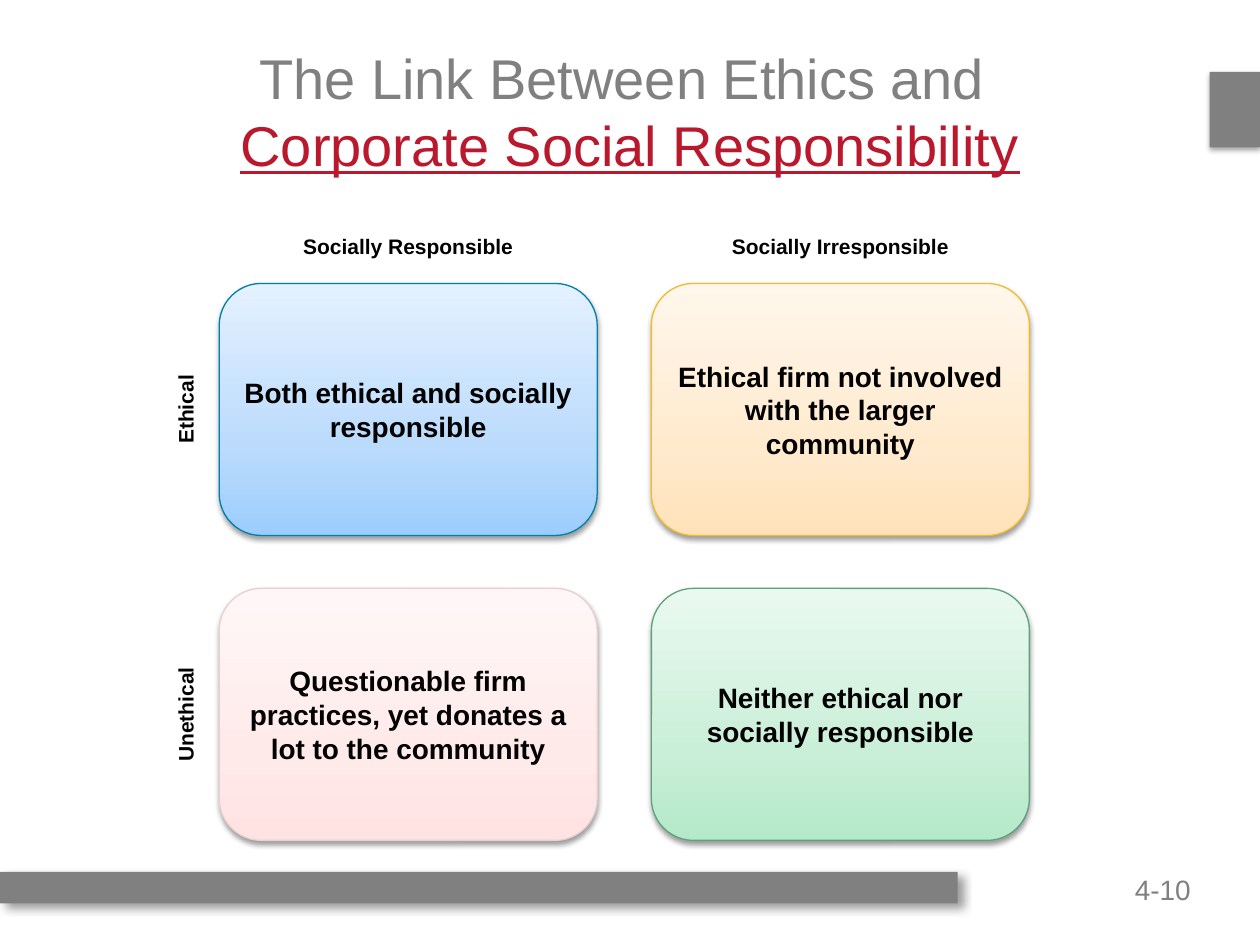
from copy import deepcopy

from pptx import Presentation
from pptx import util as u
from pptx.dml.color import RGBColor
from pptx.enum import shapes, text
from pptx.oxml import parse_xml
from pptx.oxml.ns import nsdecls, qn

GREY, RED, BLACK, WHITE = "808080", "BA182D", "000000", "FFFFFF"
MID, RIGHT = text.PP_ALIGN.CENTER, text.PP_ALIGN.RIGHT
LEFTS, TOPS = (1.74, 5.17), (2.25, 4.67)
WIDE, HIGH = 3, 2


def rgb(code):
    return RGBColor.from_string(code)


class Page:
    """Holds the text style and the slide being built."""
    face = "Arial"
    note = {"size": u.Pt(12), "bold": True}
    main = {"size": u.Pt(16), "bold": True}

    def __init__(self, deck):
        self.slide = deck.slides.add_slide(deck.slide_layouts[5])
        back = self.slide.background.fill
        back.solid()
        back.fore_color.rgb = rgb(WHITE)

    def run(self, para, words, color, form):
        run = para.add_run()
        run.text = words
        run.font.name = self.face
        run.font.color.rgb = rgb(color)
        for key, value in form.items():
            setattr(run.font, key, value)

    def title(self, first, second):
        head = self.slide.shapes.title
        place = {"left": 0.6, "top": 0.25, "width": 8.8, "height": 1.25}
        for key, value in place.items():
            setattr(head, key, u.Inches(value))
        frame = head.text_frame
        frame.vertical_anchor = text.MSO_ANCHOR.MIDDLE
        para = frame.paragraphs[0]
        para.alignment = MID
        form = {"size": u.Pt(32)}
        self.run(para, first, GREY, form)
        para.add_line_break()
        self.run(para, second, RED, {**form, "underline": True})

    def label(self, words, place, turn=0):
        box = self.slide.shapes.add_textbox(*map(u.Inches, place))
        box.rotation = turn
        frame = box.text_frame
        form = {"word_wrap": False, "vertical_anchor": text.MSO_ANCHOR.MIDDLE,
                "margin_left": 0, "margin_top": 0,
                "margin_right": 0, "margin_bottom": 0}
        for key, value in form.items():
            setattr(frame, key, value)
        para = frame.paragraphs[0]
        para.alignment = MID
        self.run(para, words, BLACK, self.note)

    def number(self, words):
        box = self.slide.shapes.add_textbox(
            *map(u.Inches, (7.5, 6.92, 1.95, 0.25)))
        frame = box.text_frame
        frame.word_wrap = True
        for side in ("left", "top", "right", "bottom"):
            setattr(frame, f"margin_{side}", 0)
        para = frame.paragraphs[0]
        para.alignment = RIGHT
        para.line_spacing = 1.02
        self.run(para, words, GREY, {"size": u.Pt(16)})

    def shade(self, shape, alpha, blur, dist, angle):
        """Give the shape an outer shadow."""
        shape.shadow.inherit = False
        effect = shape.element.spPr.find(qn("a:effectLst"))
        effect.append(parse_xml(
            f'<a:outerShdw {nsdecls("a")} blurRad="{u.Pt(blur)}" '
            f'dist="{u.Pt(dist)}" dir="{angle * 60000}" rotWithShape="0">'
            f'<a:srgbClr val="{BLACK}"><a:alpha val="{alpha * 1000}"/>'
            '</a:srgbClr></a:outerShdw>'))

    def bar(self, place, shadow):
        bar = self.slide.shapes.add_shape(
            shapes.MSO_SHAPE.RECTANGLE, *map(u.Inches, place))
        bar.fill.solid()
        bar.fill.fore_color.rgb = rgb(GREY)
        bar.line.fill.background()
        self.shade(bar, *shadow)

    def blend(self, shape, colors):
        """Fill upward through three colours."""
        fill = shape.fill
        fill.gradient()
        fill.gradient_angle = 90
        stops = shape.element.spPr.find(".//" + qn("a:gsLst"))
        stops.insert(1, deepcopy(stops[0]))
        for stop, spot, color in zip(fill.gradient_stops, (0, 0.35, 1), colors):
            stop.position = spot
            stop.color.rgb = rgb(color)

    def card(self, left, top, lines, edge, colors):
        card = self.slide.shapes.add_shape(
            shapes.MSO_SHAPE.ROUNDED_RECTANGLE,
            *map(u.Inches, (left, top, WIDE, HIGH)))
        self.blend(card, colors)
        card.line.color.rgb = rgb(edge)
        card.line.width = u.Pt(0.75)
        self.shade(card, 38, 3.1, 1.6, 90)
        frame = card.text_frame
        frame.word_wrap = True
        frame.vertical_anchor = text.MSO_ANCHOR.MIDDLE
        for i, line in enumerate(lines):
            para = frame.add_paragraph() if i else frame.paragraphs[0]
            para.alignment = MID
            self.run(para, line, BLACK, self.main)


def main():
    deck = Presentation()
    deck.slide_width, deck.slide_height = u.Inches(10), u.Inches(7.5)
    page = Page(deck)
    page.number("4-10")
    page.bar((9.6, 0.57, 0.4, 0.6), (35, 3.1, 1.8, 90))
    page.bar((0, 6.92, 7.6, 0.25), (38, 5, 4, 45))
    page.title("The Link Between Ethics and ", "Corporate Social Responsibility")

    for left, words in zip(LEFTS, ("Socially Responsible",
                                   "Socially Irresponsible")):
        page.label(words, (left, 1.83, WIDE, 0.25))
    for top, words in zip(TOPS, ("Ethical", "Unethical")):
        page.label(words, (0.47, top + 0.86, 2, 0.28), 270)

    cards = [
        (0, 0, ["Both ethical and socially", "responsible"],
         "007FAF", ("9CCDFD", "BBDBFC", "E4F1FF")),
        (1, 1, ["Neither ethical nor", "socially responsible"],
         "5FA17D", ("B4E9C9", "CAEFD8", "EAF9F0")),
        (0, 1, ["Questionable firm", "practices, yet donates a",
                "lot to the community"],
         "E8D0D0", ("FFE2E2", "FFEAEA", "FFF7F7")),
        (1, 0, ["Ethical firm not involved", "with the larger", "community"],
         "F3BA2B", ("FFE2B9", "FFEACE", "FFF7EC")),
    ]
    for col, row, *rest in cards:
        page.card(LEFTS[col], TOPS[row], *rest)
    deck.save("out.pptx")


if __name__ == "__main__":
    main()
